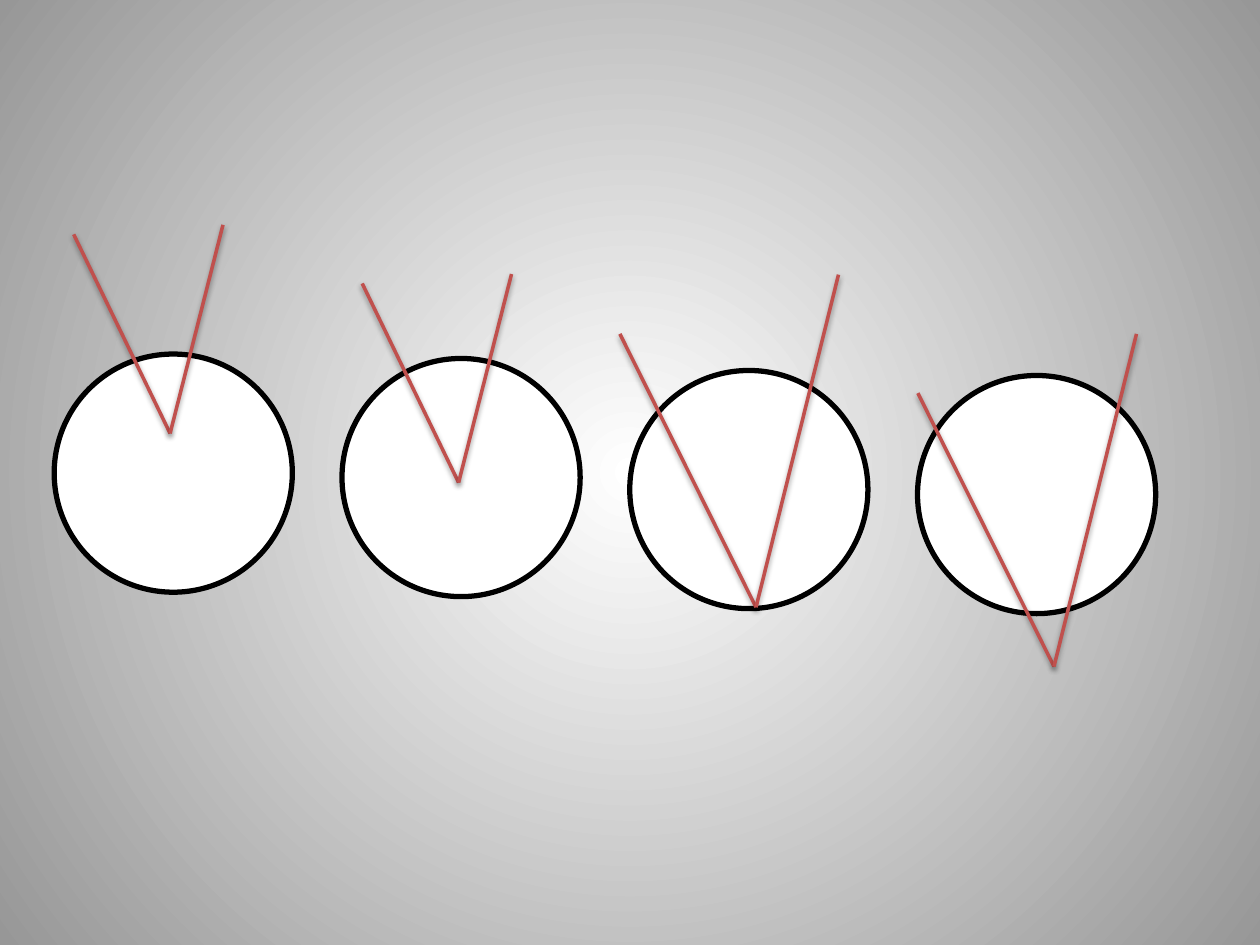
from lxml import etree
from pptx import Presentation
from pptx import util as u
from pptx.dml.color import RGBColor
from pptx.enum import shapes
from pptx.oxml import parse_xml
from pptx.oxml.ns import nsdecls, qn

WHITE = RGBColor(0xFF, 0xFF, 0xFF)
GREY = RGBColor(0x97, 0x97, 0x97)
BLACK = RGBColor(0x00, 0x00, 0x00)
RED = RGBColor(0xC0, 0x50, 0x4D)

SHADOW = (
    f'<a:effectLst {nsdecls("a")}>'
    '<a:outerShdw blurRad="40000" dist="20000" dir="5400000" rotWithShape="0">'
    '<a:srgbClr val="000000"><a:alpha val="38000"/></a:srgbClr>'
    '</a:outerShdw></a:effectLst>'
)

deck = Presentation()
deck.slide_width, deck.slide_height = u.Inches(10), u.Inches(7.5)
column, row = deck.slide_width / 100, deck.slide_height / 75
slide = deck.slides.add_slide(deck.slide_layouts[6])

backdrop = slide.background.fill
backdrop.gradient()
for stop, shade, position in zip(backdrop.gradient_stops, (WHITE, GREY), (0, 1)):
    stop.color.rgb = shade
    stop.position = position
gradient = next(slide.element.iter(qn("a:gradFill")))
gradient.remove(gradient.find(qn("a:lin")))
radial = etree.SubElement(gradient, qn("a:path"), path="circle")
etree.SubElement(radial, qn("a:fillToRect"), l="50000", t="50000", r="50000", b="50000")


def grid(*places):
    return [round(place * step) for place, step in zip(places, (column, row) * 2)]


def style_line(line, look):
    line.fill.solid()
    line.fill.fore_color.rgb = look["color"]
    line.width = u.Pt(look["width"])


DIAMETER = 18.9
CIRCLE_LEFT, CIRCLE_PITCH = 4.3, 22.84
OUTLINE = {"color": BLACK, "width": 3}
RAY = {"color": RED, "width": 2}
SHORT_RAYS = [(-7.65, -15.8), (4.2, -16.55)]
LONG_RAYS = [(-10.8, -21.7), (6.55, -26.4)]

for index, circle_top in enumerate((28.1, 28.45, 29.4, 29.8)):
    circle_left = CIRCLE_LEFT + index * CIRCLE_PITCH
    circle = slide.shapes.add_shape(
        shapes.MSO_SHAPE.OVAL, *grid(circle_left, circle_top, DIAMETER, DIAMETER)
    )
    circle.shadow.inherit = False
    circle.fill.solid()
    circle.fill.fore_color.rgb = WHITE
    style_line(circle.line, OUTLINE)

angles = [
    (13.5, 34.4, SHORT_RAYS),
    (36.4, 38.3, SHORT_RAYS),
    (60, 48.2, LONG_RAYS),
    (83.65, 52.9, LONG_RAYS),
]
for vertex_x, vertex_y, rays in angles:
    angle = slide.shapes.add_group_shape()
    for across, down in rays:
        ray = angle.shapes.add_connector(
            shapes.MSO_CONNECTOR.STRAIGHT,
            *grid(vertex_x + across, vertex_y + down, vertex_x, vertex_y),
        )
        style_line(ray.line, RAY)
        ray.element.spPr.append(parse_xml(SHADOW))

deck.save("out.pptx")
